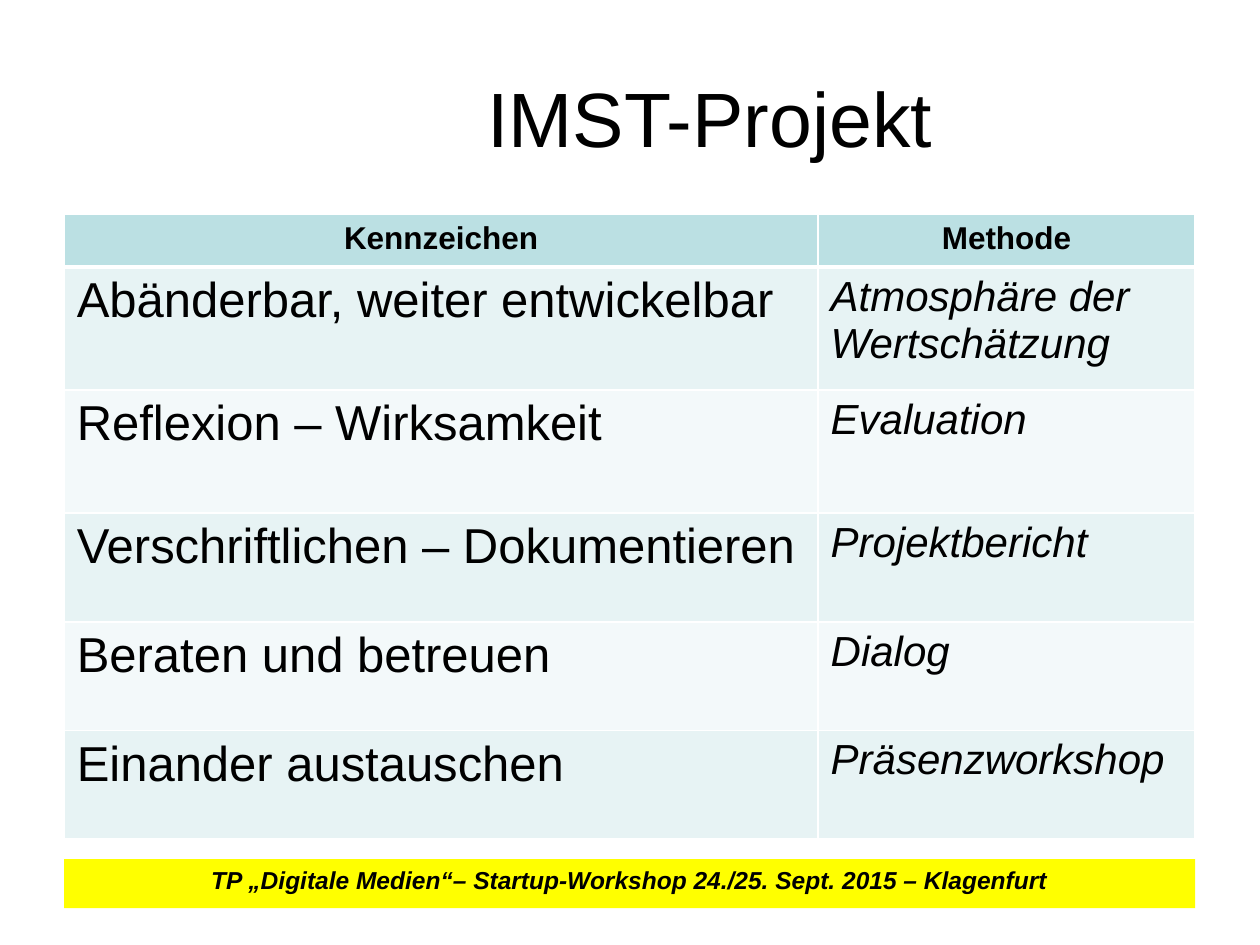
import pptx
import pptx.dml.color
import pptx.enum.shapes
import pptx.enum.text
import pptx.oxml.ns
import pptx.util
from lxml import etree

Pt = pptx.util.Pt
ALIGN = pptx.enum.text.PP_ALIGN
ANCHOR = pptx.enum.text.MSO_ANCHOR
LEFT, WIDTH = 36.7, 646.2


def color(value):
    return pptx.dml.color.RGBColor.from_string(value)


class SlideBuilder:
    font_name = "Arial"
    text_color = "000000"
    border_color = "FFFFFF"
    header_fill = "BBE0E3"
    band_fills = ("E7F3F4", "F3F9FA")

    def __init__(self, presentation):
        self.slide = presentation.slides.add_slide(presentation.slide_layouts[5])

    def set_text(self, text_frame, text, size, align=ALIGN.LEFT, bold=False, italic=False):
        text_frame.word_wrap = True
        paragraph = text_frame.paragraphs[0]
        paragraph.text = text
        paragraph.alignment = align
        font = paragraph.font
        font.name = self.font_name
        font.size = Pt(size)
        font.bold = bold
        font.italic = italic
        font.color.rgb = color(self.text_color)

    def title(self, text, left, top, width, height):
        shape = self.slide.shapes.title
        shape.left, shape.top = Pt(left), Pt(top)
        shape.width, shape.height = Pt(width), Pt(height)
        shape.text_frame.vertical_anchor = ANCHOR.MIDDLE
        self.set_text(shape.text_frame, text, 44, ALIGN.CENTER)

    def borders(self, cell, widths):
        """Draw cell borders; widths are points keyed by side (L, R, T, B)."""
        properties = cell._tc.get_or_add_tcPr()
        qn = pptx.oxml.ns.qn
        for side, width in widths.items():
            line = etree.SubElement(properties, qn(f"a:ln{side}"), w=str(Pt(width)))
            fill = etree.SubElement(line, qn("a:solidFill"))
            etree.SubElement(fill, qn("a:srgbClr"), val=self.border_color)

    def table(self, rows, left, top, column_widths, row_heights):
        """Add a table with a header row and banded body rows."""
        table = self.slide.shapes.add_table(
            len(rows), len(column_widths), Pt(left), Pt(top),
            Pt(sum(column_widths)), Pt(sum(row_heights))).table
        for column, width in zip(table.columns, column_widths):
            column.width = Pt(width)
        for row, height in zip(table.rows, row_heights):
            row.height = Pt(height)
        for row_index, texts in enumerate(rows):
            header = row_index == 0
            for column_index, text in enumerate(texts):
                cell = table.cell(row_index, column_index)
                self.borders(cell, {"L": 1, "R": 1,
                                    "T": 3 if row_index == 1 else 1,
                                    "B": 3 if header else 1})
                cell.fill.solid()
                cell.fill.fore_color.rgb = color(
                    self.header_fill if header else self.band_fills[(row_index - 1) % 2])
                if header:
                    self.set_text(cell.text_frame, text, 18, ALIGN.CENTER, bold=True)
                else:
                    method = column_index == 1
                    self.set_text(cell.text_frame, text, 24 if method else 28, italic=method)

    def banner(self, text, left, top, width, height, fill):
        shape = self.slide.shapes.add_shape(
            pptx.enum.shapes.MSO_SHAPE.RECTANGLE, Pt(left), Pt(top), Pt(width), Pt(height))
        shape.shadow.inherit = False
        shape.fill.solid()
        shape.fill.fore_color.rgb = color(fill)
        shape.line.fill.background()
        shape.text_frame.vertical_anchor = ANCHOR.TOP
        self.set_text(shape.text_frame, text, 14, ALIGN.CENTER, bold=True, italic=True)


def main():
    presentation = pptx.Presentation()
    presentation.slide_width, presentation.slide_height = Pt(720), Pt(540)
    builder = SlideBuilder(presentation)
    builder.title("IMST-Projekt", 127.4, 21.6, 556.6, 90)
    builder.table(
        [("Kennzeichen", "Methode"),
         ("Abänderbar, weiter entwickelbar", "Atmosphäre der Wertschätzung"),
         ("Reflexion – Wirksamkeit", "Evaluation"),
         ("Verschriftlichen – Dokumentieren", "Projektbericht"),
         ("Beraten und betreuen", "Dialog"),
         ("Einander austauschen", "Präsenzworkshop")],
        LEFT, 122.5, [WIDTH * 2 / 3, WIDTH / 3], [30] + [70.4] * 2 + [62.1] * 3)
    builder.banner("TP „Digitale Medien“– Startup-Workshop 24./25. Sept. 2015 – Klagenfurt",
                   LEFT, 491, WIDTH, 28, "FFFF00")
    presentation.save("out.pptx")


if __name__ == "__main__":
    main()
